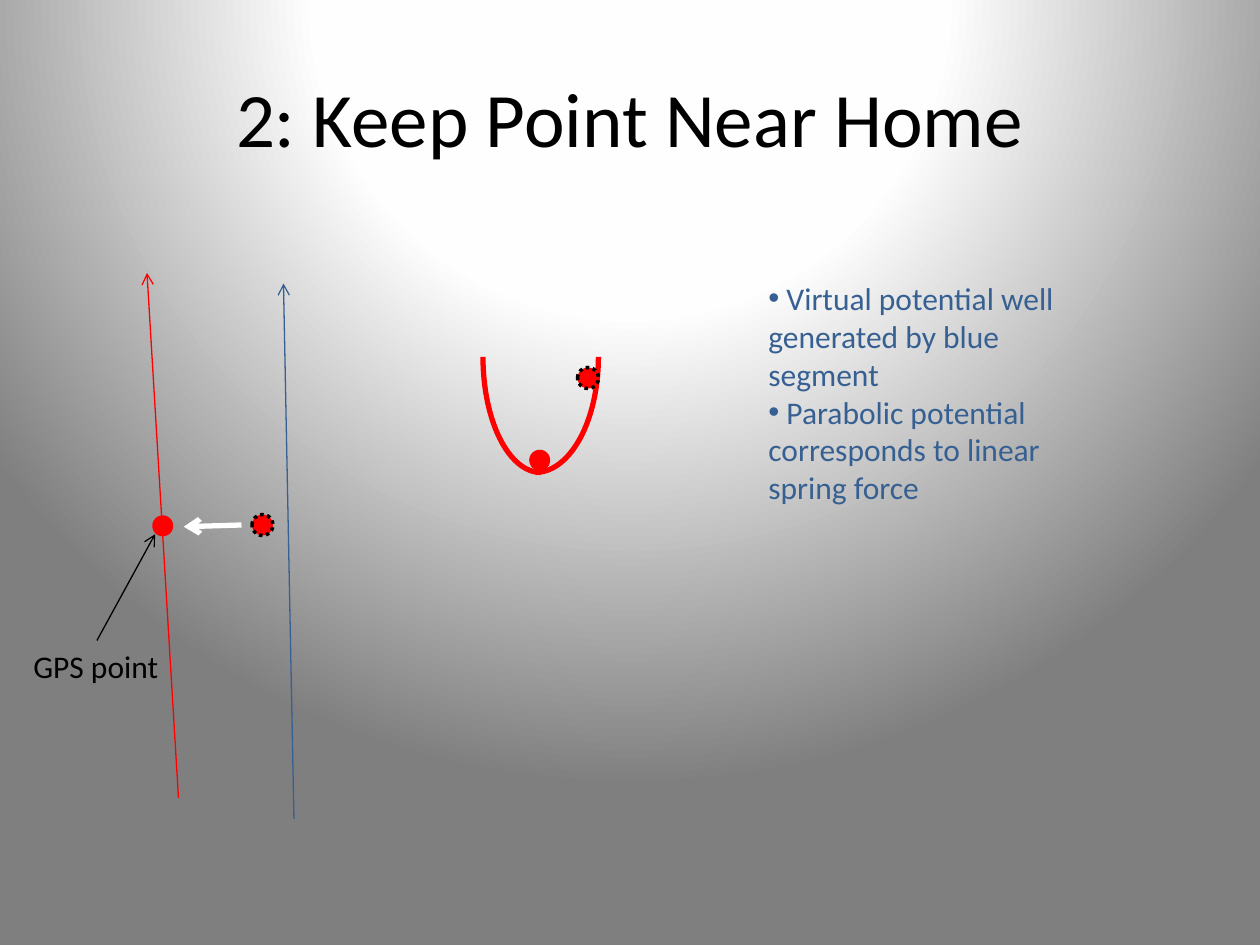
from lxml.etree import SubElement
from pptx import Presentation
from pptx.dml.color import RGBColor
from pptx.enum.dml import MSO_LINE as Dash
from pptx.enum.shapes import MSO_CONNECTOR as Connector, MSO_SHAPE as Shape
from pptx.enum.text import MSO_ANCHOR as Anchor, MSO_AUTO_SIZE as AutoSize, PP_ALIGN as Align
from pptx.oxml.ns import qn
from pptx.util import Pt

COLORS = {"black": "000000", "white": "FFFFFF", "red": "FF0000", "blue": "376092",
          "near_white": "FEFEFE", "gray": "7F7F7F"}
FONT = "Calibri"
DOT = 12


def rgb(name):
    return RGBColor.from_string(COLORS[name])


def add_xml(parent, tag, **attributes):
    return SubElement(parent, qn(tag), attributes)


class SlideBuilder:
    def __init__(self, slide):
        self.slide = slide

    def radial_background(self, stops, focus):
        """Fill with a circular gradient; stops and focus are in percent."""
        self.slide.background.fill.gradient()
        gradient = self.slide.element.find(".//" + qn("a:gradFill"))
        gradient.clear()
        stop_list = add_xml(gradient, "a:gsLst")
        for position, color in stops:
            stop = add_xml(stop_list, "a:gs", pos=str(position * 1000))
            add_xml(stop, "a:srgbClr", val=COLORS[color])
        circle = add_xml(gradient, "a:path", path="circle")
        add_xml(circle, "a:fillToRect", **{side: str(value * 1000) for side, value in focus.items()})

    def text(self, bounds, lines, size=18, color="black", bullet=None, align=Align.LEFT, **frame_format):
        box = self.slide.shapes.add_textbox(*map(Pt, bounds))
        frame = box.text_frame
        for name, value in {"word_wrap": True, **frame_format}.items():
            setattr(frame, name, value)
        for index, line in enumerate(lines):
            para = frame.add_paragraph() if index else frame.paragraphs[0]
            para.alignment = align
            span = para.add_run()
            span.text = line
            for name, value in {"name": FONT, "size": Pt(size)}.items():
                setattr(span.font, name, value)
            span.font.color.rgb = rgb(color)
            if bullet:
                properties = para._p.get_or_add_pPr()
                add_xml(properties, "a:buFont", typeface="Arial")
                add_xml(properties, "a:buChar", char=bullet)

    def outline(self, item, color, width, dash=None):
        item.line.color.rgb = rgb(color)
        for name, value in {"width": Pt(width), "dash_style": dash}.items():
            setattr(item.line, name, value)

    def dot(self, left, top, dotted=False):
        ball = self.slide.shapes.add_shape(Shape.OVAL, Pt(left), Pt(top), Pt(DOT), Pt(DOT))
        ball.shadow.inherit = False
        ball.fill.solid()
        ball.fill.fore_color.rgb = rgb("red")
        if dotted:
            self.outline(ball, "black", 2, Dash.ROUND_DOT)
        else:
            ball.line.fill.background()

    def arrow(self, start, end, color, width=0.75):
        line = self.slide.shapes.add_connector(Connector.STRAIGHT, *map(Pt, (*start, *end)))
        self.outline(line, color, width)
        add_xml(line.line._get_or_add_ln(), "a:tailEnd", type="arrow")
        add_xml(line.element.spPr, "a:effectLst")

    def well(self, top, height, halves):
        """Group quarter arcs, each given as left, width and flips, into a cup."""
        group = self.slide.shapes.add_group_shape()
        for left, width, flips in halves:
            arc = group.shapes.add_shape(Shape.ARC, *map(Pt, (left, top, width, height)))
            arc.shadow.inherit = False
            arc.fill.background()
            self.outline(arc, "red", 3)
            transform = arc.element.spPr.find(qn("a:xfrm"))
            for flip in flips:
                transform.set(flip, "1")


def main():
    deck = Presentation()
    deck.slide_width, deck.slide_height = Pt(720), Pt(540)
    page = SlideBuilder(deck.slides.add_slide(deck.slide_layouts[6]))
    page.radial_background([(0, "white"), (40, "near_white"), (100, "gray")],
                           {"l": 50, "t": -80, "r": 50, "b": 180})
    page.text((36, 21.6, 648, 90), ["2: Keep Point Near Home"], size=44,
              align=Align.CENTER, vertical_anchor=Anchor.MIDDLE)

    page.dot(87, 294.5)
    page.text((12, 366, 86.4, 29), ["GPS point"], word_wrap=False,
              auto_size=AutoSize.SHAPE_TO_FIT_TEXT)
    page.arrow((55.4, 366), (88.6, 305.3), "black")
    page.dot(144, 294, dotted=True)
    page.arrow((138, 300), (105, 301), "white", 3)

    page.well(138, 132, [(276, 66, ("flipH", "flipV")), (270, 72, ("flipV",))])
    page.dot(330, 210, dotted=True)
    page.dot(302.4, 257)

    page.text((432, 156, 192, 138),
              [" Virtual potential well generated by blue segment",
               " Parabolic potential corresponds to linear spring force"],
              color="blue", bullet="•", auto_size=AutoSize.SHAPE_TO_FIT_TEXT)
    page.arrow((102, 456), (84, 156), "red")
    page.arrow((168, 468), (162, 162), "blue")
    deck.save("out.pptx")


if __name__ == "__main__":
    main()
